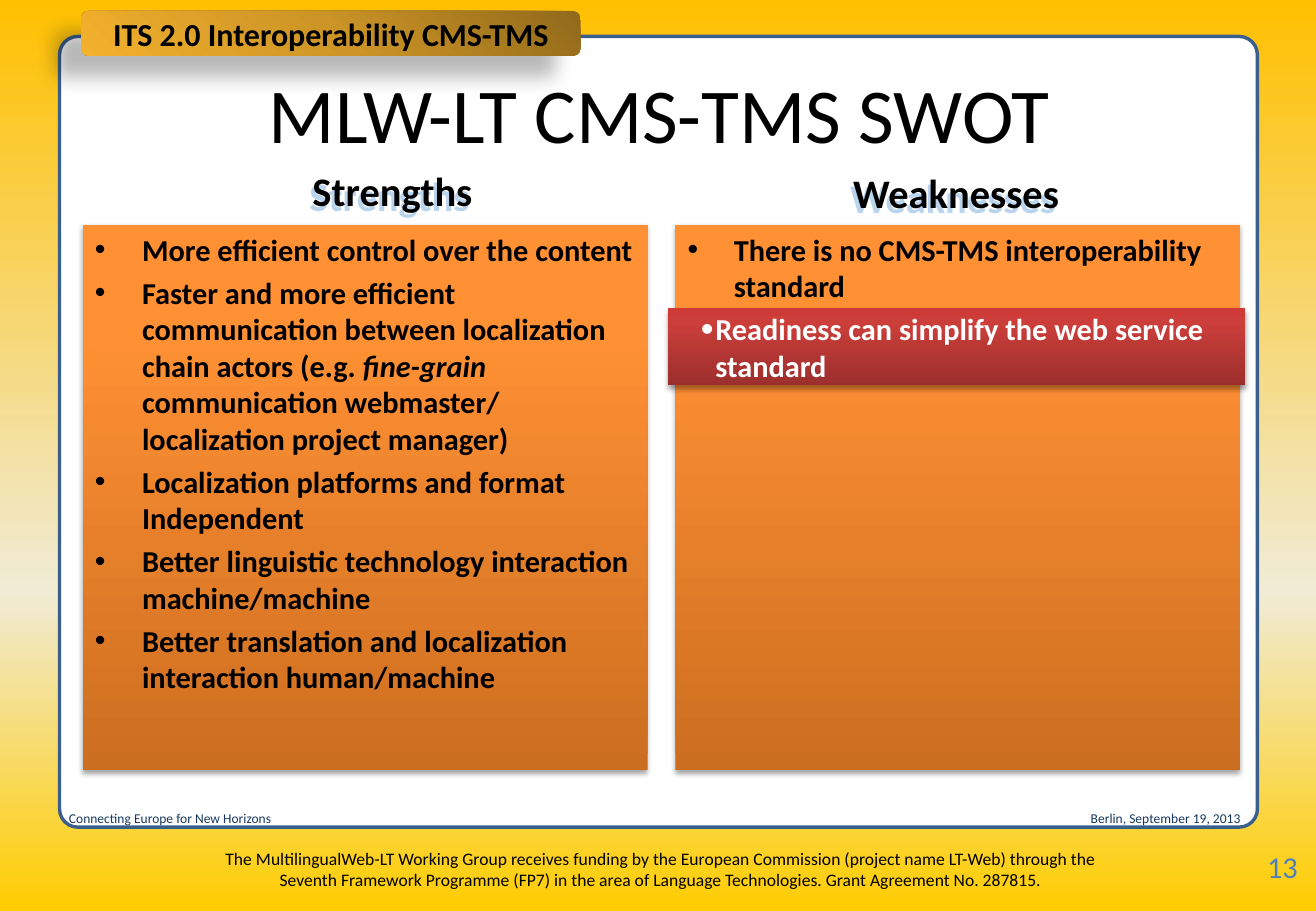
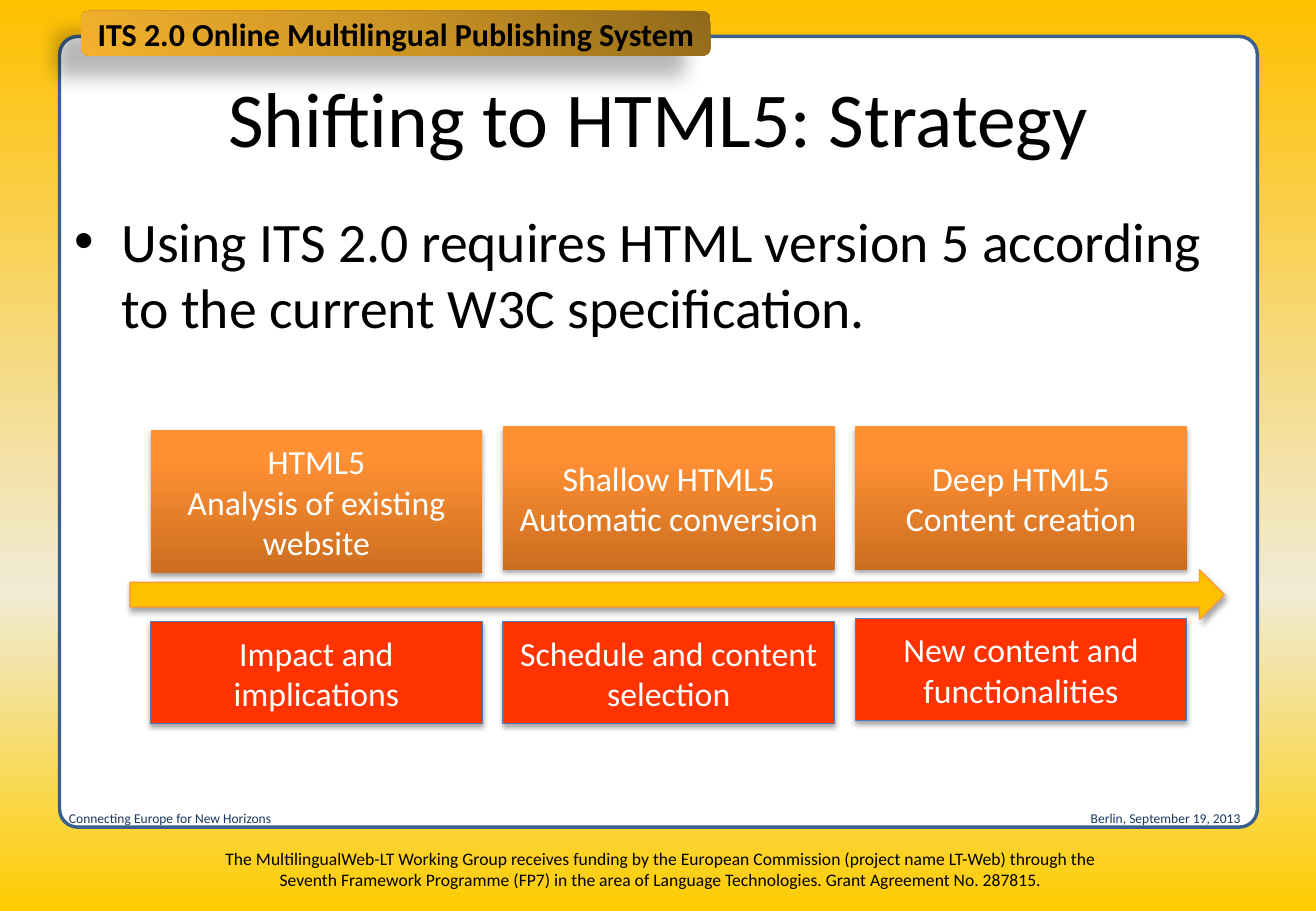
from dataclasses import dataclass

from lxml import etree
from pptx import Presentation
from pptx.dml.color import RGBColor
from pptx.enum import shapes, text
from pptx.oxml.ns import qn
from pptx.util import Pt


@dataclass(frozen=True)
class Theme:
    font: str = "Calibri"
    black: str = "000000"
    white: str = "FFFFFF"
    footer: str = "17375E"
    number: str = "4F81BD"
    frame: str = "3A5F8C"
    arrow: str = "FFC000"
    arrow_edge: str = "FF9933"
    impact: str = "FF3300"
    impact_edge: str = "4B7EBC"
    title_size: float = 46
    body_size: float = 33
    heading_size: float = 24
    step_size: float = 20
    tab_size: float = 19
    list_size: float = 18
    funding_size: float = 10.4
    footer_size: float = 8
    sky: tuple = (90, (0, "FFC000"), (65, "F0EBD5"), (100, "FFCC00"))
    orange: tuple = (270, (0, "CC6E20"), (80, "FF9034"), (100, "FF9136"))
    red: tuple = (270, (0, "9C2F2D"), (80, "CB3E3A"), (100, "CE3B37"))
    gold: tuple = (135, (0, "90691B"), (50, "CD9526"), (100, "F3B12D"))
    box_shadow: tuple = ("000000", 35, 3.1, 1.8, 90)
    tab_shadow: tuple = ("000000", 28, 11.8, 19.7, 141)
    text_shadow: tuple = ("9DC3E6", 70, 0, 3.5, 120)


THEME = Theme()
CENTER, LEFT = text.PP_ALIGN.CENTER, text.PP_ALIGN.LEFT
TOP, MIDDLE = text.MSO_ANCHOR.TOP, text.MSO_ANCHOR.MIDDLE
RECTANGLE = shapes.MSO_SHAPE.RECTANGLE
ROUNDED = shapes.MSO_SHAPE.ROUNDED_RECTANGLE
ARROW = shapes.MSO_SHAPE.RIGHT_ARROW

FOOTERS = [
    ("The MultilingualWeb-LT Working Group receives funding by the European Commission "
     "(project name LT-Web) through the Seventh Framework Programme (FP7) in the area of "
     "Language Technologies. Grant Agreement No. 287815.",
     (116.6, 499, 550, 28.8), THEME.funding_size, THEME.black, CENTER),
    ("Berlin, September 19, 2013", (639.4, 476.6, 110, 17.3),
     THEME.footer_size, THEME.footer, LEFT),
    ("Connecting Europe for New Horizons", (33.8, 476.6, 142, 17.3),
     THEME.footer_size, THEME.footer, LEFT),
]

SWOT = [
    ("Strengths", (146.9, 95, 171.4, 36), 28, [
        "More efficient control over the content",
        "Faster and more efficient communication between localization chain actors "
        "(e.g. *fine-grain *communication webmaster/ localization project manager)",
        "Localization platforms and format Independent",
        "Better linguistic technology interaction machine/machine",
        "Better translation and localization interaction human/machine",
    ]),
    ("Weaknesses", (491.8, 95.8, 149.8, 36), 27.4, [
        "There is no CMS-TMS interoperability standard",
    ]),
]
READINESS = "Readiness can simplify the web service standard"

REQUIREMENT = "Using ITS 2.0 requires HTML version 5 according to the current W3C specification."
STEPS = [
    (["HTML5", "Analysis of existing website"], 254.9, "Impact and implications", 368.6),
    (["Shallow HTML5", "Automatic conversion"], 252.7, "Schedule and content selection", 368.6),
    (["Deep HTML5", "Content creation"], 252.7, "New content and functionalities", 366.5),
]


def place(shape, box):
    shape.left, shape.top, shape.width, shape.height = map(Pt, box)


def set_gradient(fill, element, gradient):
    angle, *stops = gradient
    fill.gradient()
    grad_fill = next(element.iter(qn("a:gradFill")))
    for child in list(grad_fill):
        grad_fill.remove(child)
    stop_list = etree.SubElement(grad_fill, qn("a:gsLst"))
    for position, color in stops:
        stop = etree.SubElement(stop_list, qn("a:gs"), pos=str(position * 1000))
        etree.SubElement(stop, qn("a:srgbClr"), val=color)
    etree.SubElement(grad_fill, qn("a:lin"), ang=str(angle * 60000), scaled="0")


def paint(shape, fill):
    if isinstance(fill, tuple):
        set_gradient(shape.fill, shape._element.spPr, fill)
    else:
        shape.fill.solid()
        shape.fill.fore_color.rgb = RGBColor.from_string(fill)


def set_shadow(shape, shadow):
    shape.shadow.inherit = False
    if shadow:
        color, opacity, blur, distance, angle = shadow
        effects = shape._element.spPr.find(qn("a:effectLst"))
        outer = etree.SubElement(effects, qn("a:outerShdw"), blurRad=str(Pt(blur)),
                                 dist=str(Pt(distance)), dir=str(angle * 60000),
                                 algn="ctr", rotWithShape="0")
        tint = etree.SubElement(outer, qn("a:srgbClr"), val=color)
        etree.SubElement(tint, qn("a:alpha"), val=str(opacity * 1000))


def set_bullet(paragraph, margin, hanging, size):
    properties = paragraph._p.get_or_add_pPr()
    properties.set("marL", str(Pt(margin)))
    properties.set("indent", str(-Pt(hanging)))
    etree.SubElement(properties, qn("a:buSzPct"), val=str(size * 1000))
    etree.SubElement(properties, qn("a:buFont"), typeface="Arial")
    etree.SubElement(properties, qn("a:buChar"), char="•")


def write(shape, lines, size, color=THEME.black, bold=False, align=CENTER,
          anchor=MIDDLE, bullet=None, gap=0, wrap=True):
    frame = shape.text_frame
    frame.word_wrap = wrap
    frame.auto_size = text.MSO_AUTO_SIZE.NONE
    frame.vertical_anchor = anchor
    for index, line in enumerate(lines):
        paragraph = frame.add_paragraph() if index else frame.paragraphs[0]
        if bullet:
            set_bullet(paragraph, *bullet)
        paragraph.alignment = align
        paragraph.space_before = Pt(gap if index else 0)
        for position, piece in enumerate(line.split("*")):
            run = paragraph.add_run()
            run.text = piece
            run.font.name = THEME.font
            run.font.size = Pt(size)
            run.font.bold = bold
            run.font.italic = position % 2 == 1
            run.font.color.rgb = RGBColor.from_string(color)


def add_box(slide, kind, box, fill, line=None, shadow=None):
    shape = slide.shapes.add_shape(kind, *map(Pt, box))
    paint(shape, fill)
    if line:
        color, width = line
        shape.line.color.rgb = RGBColor.from_string(color)
        shape.line.width = Pt(width)
    else:
        shape.line.fill.background()
    set_shadow(shape, shadow)
    return shape


def add_label(slide, label, box, size, color, align):
    shape = slide.shapes.add_textbox(*map(Pt, box))
    write(shape, [label], size, color, align=align, anchor=TOP)
    return shape


def dress_master(presentation, slide):
    master = presentation.slide_master
    set_gradient(master.background.fill, master._element, THEME.sky)
    frame = add_box(slide, ROUNDED, (35.3, 21.6, 710, 468.7), THEME.white, (THEME.frame, 2))
    frame.adjustments[0] = 0.023
    furniture = [frame] + [add_label(slide, *footer) for footer in FOOTERS]
    for index, shape in enumerate(furniture):
        shape._element.nvSpPr.cNvPr.set("id", str(100 + index))
        master.shapes._spTree.insert(2 + index, shape._element)


def add_title(slide, title, box):
    place(slide.shapes.title, box)
    write(slide.shapes.title, [title], THEME.title_size)


def add_tab(slide, label, width):
    tab = add_box(slide, ROUNDED, (48.2, 6.5, width, 26.6), THEME.gold, shadow=THEME.tab_shadow)
    write(tab, [label], THEME.tab_size, bold=True, wrap=False)


def build_swot(slide):
    add_title(slide, "MLW-LT CMS-TMS SWOT", (36.7, 21.6, 707.8, 90))
    for index, (heading, heading_box, hanging, items) in enumerate(SWOT):
        header = slide.placeholders[1 + 2 * index]
        place(header, heading_box)
        set_shadow(header, THEME.text_shadow)
        write(header, [heading], THEME.heading_size, bold=True, anchor=TOP)
        column = slide.placeholders[2 + 2 * index]
        place(column, (49 + 351.3 * index, 133.2, 334.8, 323.3))
        paint(column, THEME.orange)
        set_shadow(column, THEME.box_shadow)
        write(column, items, THEME.list_size, bold=True, align=LEFT, anchor=TOP,
              bullet=(hanging, hanging, 100), gap=4)
    banner = add_box(slide, RECTANGLE, (396, 182.9, 342, 45.4), THEME.red,
                     shadow=THEME.box_shadow)
    write(banner, [READINESS], THEME.list_size, THEME.white, bold=True, align=LEFT,
          bullet=(20.9, 8.6, 120))
    add_tab(slide, "ITS 2.0 Interoperability CMS-TMS", 295.9)
    number = add_label(slide, "13", (749.5, 501.8, 30, 28.8), THEME.list_size,
                       THEME.number, LEFT)
    frame = number.text_frame
    frame.margin_left = frame.margin_right = Pt(1.5)
    frame.margin_top = frame.margin_bottom = Pt(0.7)


def build_strategy(slide):
    add_title(slide, "Shifting to HTML5: Strategy", (38.9, 9.4, 702, 118.8))
    body = slide.placeholders[1]
    place(body, (36.7, 118.8, 708.5, 363.6))
    write(body, [REQUIREMENT], THEME.body_size, align=LEFT, anchor=TOP, bullet=(28, 28, 100))
    add_box(slide, ARROW, (77, 337.7, 648.7, 29.5), THEME.arrow,
            (THEME.arrow_edge, 0.75), THEME.box_shadow)
    for index, (stage, stage_top, impact, impact_top) in enumerate(STEPS):
        left, width = 89.3 + 208.8 * index, 196.6
        stage_box = add_box(slide, RECTANGLE, (left, stage_top, width, 85), THEME.orange,
                            shadow=THEME.box_shadow)
        write(stage_box, stage, THEME.step_size, THEME.white)
        impact_box = add_box(slide, RECTANGLE, (left, impact_top, width, 60.5), THEME.impact,
                             (THEME.impact_edge, 0.75), THEME.box_shadow)
        write(impact_box, [impact], THEME.step_size, THEME.white)
    add_tab(slide, "ITS 2.0 Online Multilingual Publishing System", 373)


def main():
    presentation = Presentation()
    presentation.slide_width, presentation.slide_height = Pt(780), Pt(540)
    layouts = presentation.slide_layouts
    swot = presentation.slides.add_slide(layouts.get_by_name("Comparison"))
    strategy = presentation.slides.add_slide(layouts.get_by_name("Title and Content"))
    dress_master(presentation, swot)
    build_swot(swot)
    build_strategy(strategy)
    presentation.save("out.pptx")


if __name__ == "__main__":
    main()
